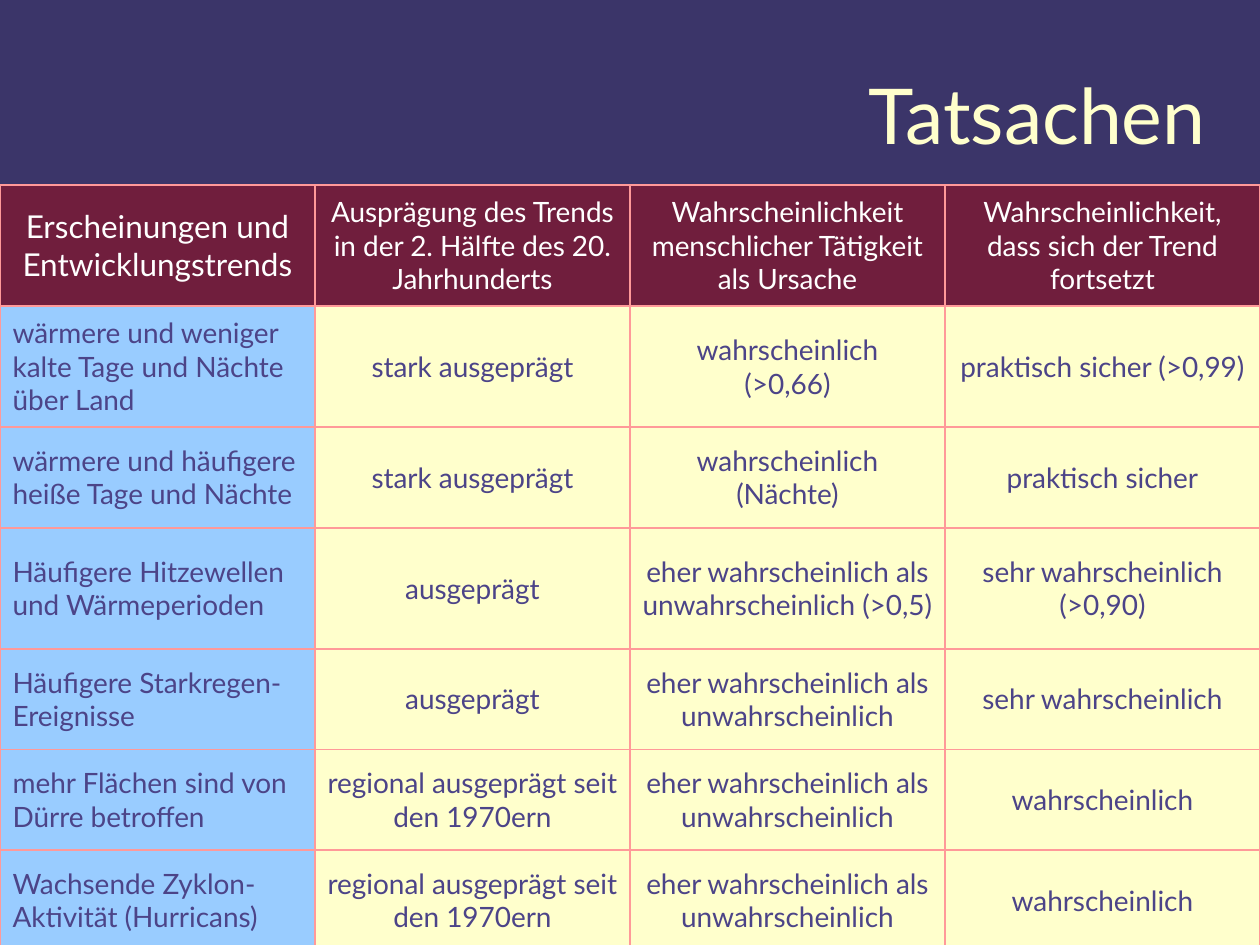
from lxml import etree
from pptx import Presentation
from pptx.dml.color import RGBColor
from pptx.enum.text import MSO_ANCHOR, PP_ALIGN
from pptx.oxml.ns import qn
from pptx.util import Cm, Pt

MIDDLE = MSO_ANCHOR.MIDDLE
LEFT, CENTER, RIGHT = PP_ALIGN.LEFT, PP_ALIGN.CENTER, PP_ALIGN.RIGHT
FONT = "Lato"
NAVY, CREAM, WHITE = "3B3569", "FFFFCC", "FFFFFF"
WINE, SKY, VIOLET, PINK = "701E3D", "99CCFF", "4C4488", "FF9999"

ROWS = [
    ["Erscheinungen und Entwicklungstrends",
     "Ausprägung des Trends in der 2. Hälfte des 20. Jahrhunderts",
     "Wahrscheinlichkeit menschlicher Tätigkeit als Ursache",
     "Wahrscheinlichkeit, dass sich der Trend fortsetzt"],
    ["wärmere und weniger kalte Tage und Nächte über Land",
     "stark ausgeprägt", "wahrscheinlich\n(>0,66)", "praktisch sicher (>0,99)"],
    ["wärmere und häufigere heiße Tage und Nächte",
     "stark ausgeprägt", "wahrscheinlich (Nächte)", "praktisch sicher"],
    ["Häufigere Hitzewellen und Wärmeperioden", "ausgeprägt",
     "eher wahrscheinlich als unwahrscheinlich (>0,5)",
     "sehr wahrscheinlich (>0,90)"],
    ["Häufigere Starkregen-Ereignisse", "ausgeprägt",
     "eher wahrscheinlich als unwahrscheinlich", "sehr wahrscheinlich"],
    ["mehr Flächen sind von Dürre betroffen",
     "regional ausgeprägt seit den 1970ern",
     "eher wahrscheinlich als unwahrscheinlich", "wahrscheinlich"],
    ["Wachsende Zyklon-Aktivität (Hurricans)",
     "regional ausgeprägt seit den 1970ern",
     "eher wahrscheinlich als unwahrscheinlich", "wahrscheinlich"],
]
TALL, LOW = 2.44, 2.03
HEIGHTS = [TALL, TALL, LOW, TALL, LOW, LOW, LOW]


def write(p, text, size, color, align):
    p.text = text
    p.alignment = align
    p.font.name = FONT
    p.font.size = Pt(size)
    p.font.color.rgb = RGBColor.from_string(color)


def add_borders(cell, color):
    tcPr = cell._tc.get_or_add_tcPr()
    for side in ("a:lnL", "a:lnR", "a:lnT", "a:lnB"):
        ln = etree.SubElement(tcPr, qn(side), w=str(Pt(1)))
        fill = etree.SubElement(ln, qn("a:solidFill"))
        etree.SubElement(fill, qn("a:srgbClr"), val=color)


prs = Presentation()
prs.slide_width, prs.slide_height = Cm(25.4), Cm(19.05)
s = prs.slides.add_slide(prs.slide_layouts[6])
s.background.fill.solid()
s.background.fill.fore_color.rgb = RGBColor.from_string(NAVY)

# Title
tf = s.shapes.add_textbox(Cm(3.1), Cm(0.71), Cm(21.46), Cm(3.18)).text_frame
tf.word_wrap = True
tf.vertical_anchor = MIDDLE
write(tf.paragraphs[0], "Tatsachen", 44, CREAM, RIGHT)

# Table of trends
table = s.shapes.add_table(len(ROWS), len(ROWS[0]), Cm(0), Cm(3.73),
                           Cm(25.4), Cm(sum(HEIGHTS))).table
for row, height in zip(table.rows, HEIGHTS):
    row.height = Cm(height)

for r, texts in enumerate(ROWS):
    for c, text in enumerate(texts):
        cell = table.cell(r, c)
        add_borders(cell, PINK)
        if r == 0:
            fill, color = WINE, WHITE
        else:
            fill, color = (SKY if c == 0 else CREAM), VIOLET
        cell.fill.solid()
        cell.fill.fore_color.rgb = RGBColor.from_string(fill)
        cell.vertical_anchor = MIDDLE
        p = cell.text_frame.paragraphs[0]
        write(p, text, 18 if r == c == 0 else 16, color,
              LEFT if r and c == 0 else CENTER)
        p.font.bold = False

prs.save("out.pptx")
